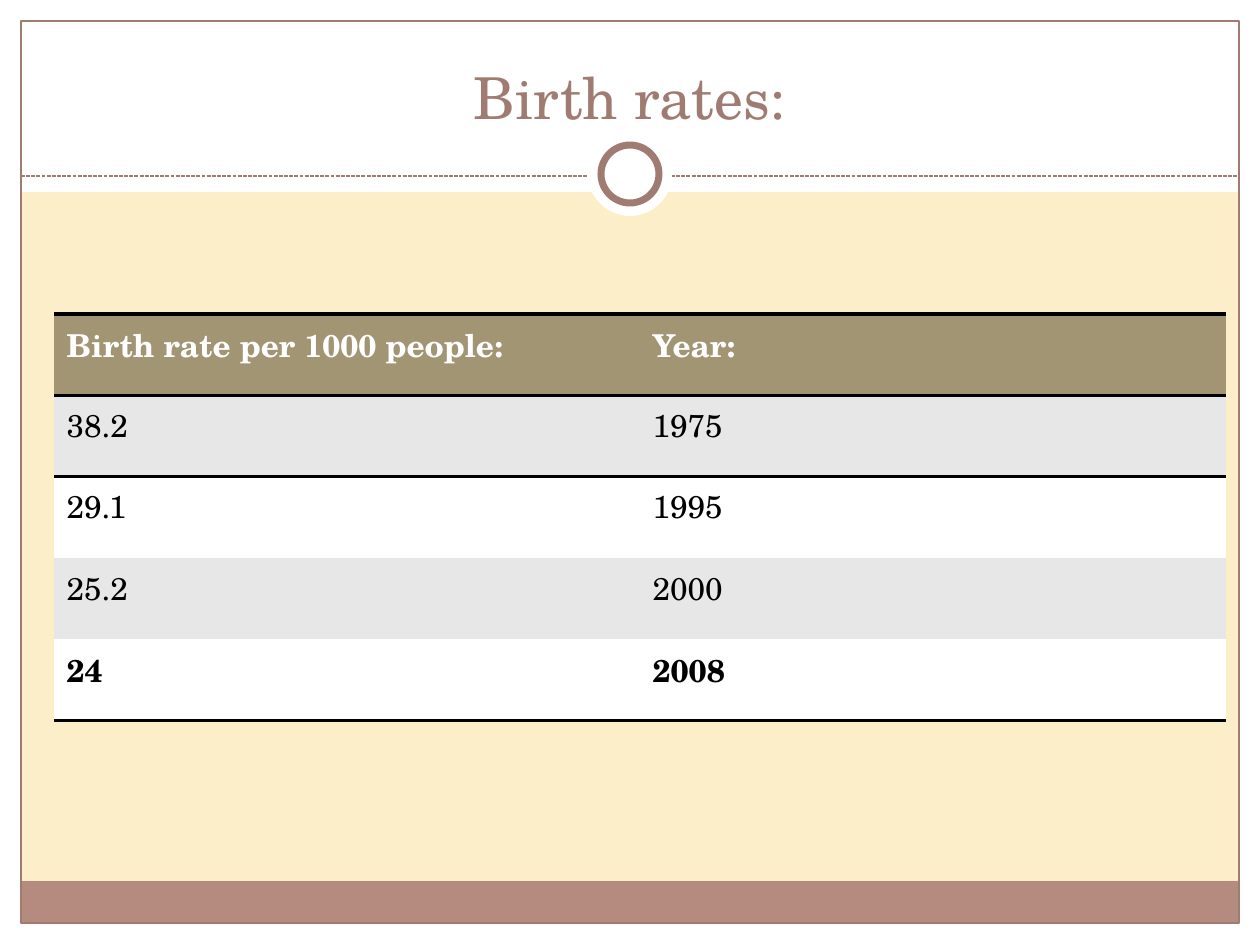
from dataclasses import dataclass
from typing import Optional

from lxml import etree
from pptx import Presentation
from pptx.dml.color import RGBColor
from pptx.enum.dml import MSO_LINE
from pptx.enum.shapes import MSO_CONNECTOR, MSO_SHAPE
from pptx.enum.text import MSO_ANCHOR, PP_ALIGN
from pptx.oxml.ns import qn
from pptx.util import Emu, Pt

RECTANGLE = MSO_SHAPE.RECTANGLE
OVAL = MSO_SHAPE.OVAL
STRAIGHT = MSO_CONNECTOR.STRAIGHT
SQUARE_DOT = MSO_LINE.SQUARE_DOT
CENTER = PP_ALIGN.CENTER
BOTTOM = MSO_ANCHOR.BOTTOM

PX_PER_INCH = 126
FONT = "TeX Gyre Schola"
WHITE = "FFFFFF"
BLACK = "000000"
ROSE = "A07B71"
CREAM = "FBEEC9"
PLAIN_STYLE = "{2D5ABB26-0587-4C30-8999-92F81FD0307C}"


@dataclass(frozen=True)
class Panel:
    left: int
    top: int
    width: int
    height: int
    fill: Optional[str] = WHITE
    line: Optional[str] = None
    line_width: float = 0.75
    kind: int = RECTANGLE


@dataclass(frozen=True)
class Row:
    rate: str
    year: str
    fill: str
    color: str = BLACK
    bold: bool = False
    borders: tuple = ()


PANELS = [
    Panel(0, 924, 1260, 21),
    Panel(0, 0, 1260, 192),
    Panel(0, 0, 21, 945),
    Panel(1239, 0, 21, 945),
    Panel(21, 881, 1217, 43, "B58B80"),
    Panel(21, 21, 1218, 902, None, ROSE),
]
RINGS = [
    Panel(588, 132, 84, 84, kind=OVAL),
    Panel(601, 145, 58, 58, WHITE, ROSE, 4, OVAL),
]
ROWS = [
    Row("Birth rate per 1000 people:", "Year:", "A19574", WHITE, True, ("a:lnT", "a:lnB")),
    Row("38.2", "1975", "E7E7E7", borders=("a:lnT",)),
    Row("29.1", "1995", WHITE),
    Row("25.2", "2000", "E7E7E7"),
    Row("24", "2008", WHITE, bold=True, borders=("a:lnB",)),
]


def px(length: int) -> Emu:
    return Emu(round(length * 914400 / PX_PER_INCH))


def rgb(color: str) -> RGBColor:
    return RGBColor.from_string(color)


def style_font(para, size: int, color: str, bold: bool = False) -> None:
    para.font.name = FONT
    para.font.size = Pt(size)
    para.font.bold = bold
    para.font.color.rgb = rgb(color)


def add_panel(page, panel: Panel) -> None:
    shape = page.shapes.add_shape(
        panel.kind, px(panel.left), px(panel.top), px(panel.width), px(panel.height)
    )
    shape.shadow.inherit = False
    if panel.fill:
        shape.fill.solid()
        shape.fill.fore_color.rgb = rgb(panel.fill)
    else:
        shape.fill.background()
    if panel.line:
        shape.line.color.rgb = rgb(panel.line)
        shape.line.width = Pt(panel.line_width)
    else:
        shape.line.fill.background()


def add_divider(page) -> None:
    divider = page.shapes.add_connector(STRAIGHT, px(21), px(176), px(1239), px(176))
    divider.line.color.rgb = rgb(ROSE)
    divider.line.width = Pt(0.75)
    divider.line.dash_style = SQUARE_DOT
    etree.SubElement(divider._element.spPr, qn("a:effectLst"))


def add_borders(cell, borders: tuple) -> None:
    properties = cell._tc.get_or_add_tcPr()
    for position, tag in enumerate(borders):
        border = etree.Element(qn(tag), w=str(Pt(2)))
        fill = etree.SubElement(border, qn("a:solidFill"))
        etree.SubElement(fill, qn("a:srgbClr"), val=BLACK)
        properties.insert(position, border)


def add_rate_table(page) -> None:
    frame = page.shapes.add_table(len(ROWS), 2, px(54), px(314), px(1172), px(407))
    table = frame.table
    table.first_row = False
    table.horz_banding = False
    table._tbl.tblPr.find(qn("a:tableStyleId")).text = PLAIN_STYLE
    for row_index, row in enumerate(ROWS):
        for column_index, text in enumerate((row.rate, row.year)):
            cell = table.cell(row_index, column_index)
            cell.text = text
            cell.fill.solid()
            cell.fill.fore_color.rgb = rgb(row.fill)
            style_font(cell.text_frame.paragraphs[0], 18, row.color, row.bold)
            add_borders(cell, row.borders)


def set_title(page) -> None:
    title = page.shapes.title
    title.left, title.top, title.width, title.height = px(42), px(32), px(1176), px(105)
    title.text_frame.text = "Birth rates:"
    title.text_frame.vertical_anchor = BOTTOM
    para = title.text_frame.paragraphs[0]
    para.alignment = CENTER
    style_font(para, 33, ROSE)
    page.shapes._spTree.append(title._element)


def main() -> None:
    deck = Presentation()
    deck.slide_width, deck.slide_height = px(1260), px(945)
    page = deck.slides.add_slide(deck.slide_layouts[5])
    page.background.fill.solid()
    page.background.fill.fore_color.rgb = rgb(CREAM)
    for panel in PANELS:
        add_panel(page, panel)
    add_divider(page)
    for ring in RINGS:
        add_panel(page, ring)
    add_rate_table(page)
    set_title(page)
    deck.save("out.pptx")


if __name__ == "__main__":
    main()
